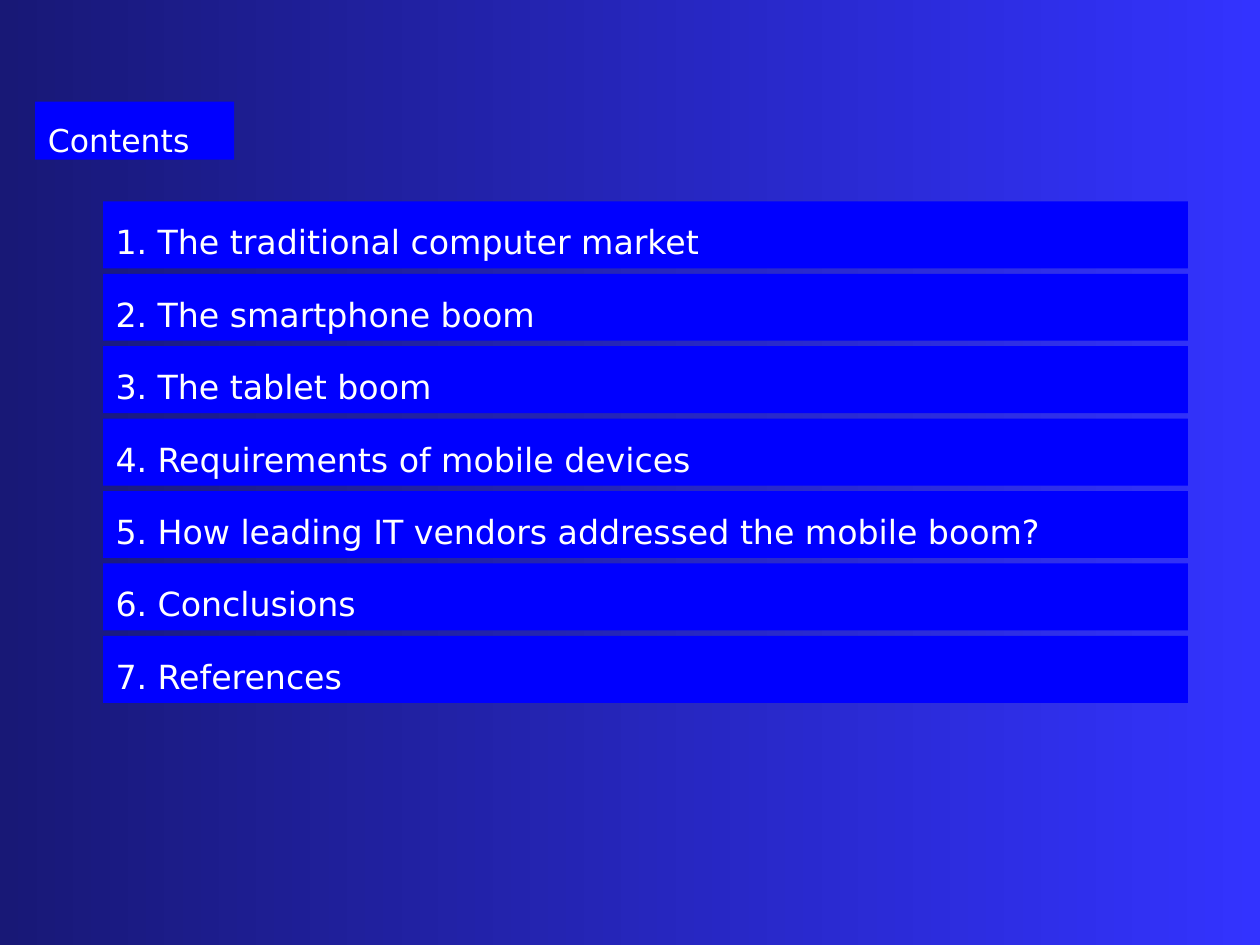
from dataclasses import dataclass

from pptx import Presentation
from pptx import util as u
from pptx.dml.color import RGBColor
from pptx.enum import shapes, text


@dataclass(frozen=True)
class Theme:
    font: str = "DejaVu Sans"
    heading_size: int = 18
    topic_size: int = 19
    ink: str = "FFFFFF"
    bar: str = "0000FF"
    backdrop: tuple = ("181876", "3333FF")


THEME = Theme()
TOPICS = (
    "The traditional computer market",
    "The smartphone boom",
    "The tablet boom",
    "Requirements of mobile devices",
    "How leading IT vendors addressed the mobile boom?",
    "Conclusions",
    "References",
)
FIRST_TOP, PITCH = 4.06, 1.46


def paint_backdrop(slide):
    fill = slide.background.fill
    fill.gradient()
    fill.gradient_angle = 0
    for stop, color, position in zip(fill.gradient_stops, THEME.backdrop, (0, 1)):
        stop.color.rgb = RGBColor.from_string(color)
        stop.position = position


def style_bar(bar, wording, size):
    bar.fill.solid()
    bar.fill.fore_color.rgb = RGBColor.from_string(THEME.bar)
    bar.line.fill.background()

    frame = bar.text_frame
    frame.word_wrap = True
    frame.auto_size = text.MSO_AUTO_SIZE.NONE
    frame.vertical_anchor = text.MSO_ANCHOR.TOP

    line = frame.paragraphs[0]
    line.alignment = text.PP_ALIGN.LEFT
    line.line_spacing = 1.35
    line.space_before = u.Pt(0)
    indent = line._p.get_or_add_pPr()
    indent.set("marL", str(u.Cm(0.97)))
    indent.set("indent", str(u.Cm(-0.97)))

    run = line.add_run()
    run.text = wording
    run.font.name = THEME.font
    run.font.size = u.Pt(size)
    run.font.color.rgb = RGBColor.from_string(THEME.ink)


def add_heading(slide, wording):
    heading = slide.shapes.title
    heading.left, heading.top = u.Cm(0.71), u.Cm(2.05)
    heading.width, heading.height = u.Cm(4.01), u.Cm(1.17)
    style_bar(heading, wording, THEME.heading_size)


def add_topic(slide, number, topic):
    top = FIRST_TOP + (number - 1) * PITCH
    bar = slide.shapes.add_shape(
        shapes.MSO_SHAPE.RECTANGLE, u.Cm(2.08), u.Cm(top), u.Cm(21.87), u.Cm(1.35)
    )
    bar.shadow.inherit = False
    style_bar(bar, f"{number}. {topic}", THEME.topic_size)


def main():
    deck = Presentation()
    deck.slide_width, deck.slide_height = u.Cm(25.4), u.Cm(19.05)
    slide = deck.slides.add_slide(deck.slide_layouts.get_by_name("Title Only"))
    paint_backdrop(slide)
    add_heading(slide, "Contents")
    for number, topic in enumerate(TOPICS, start=1):
        add_topic(slide, number, topic)
    deck.save("out.pptx")


if __name__ == "__main__":
    main()
